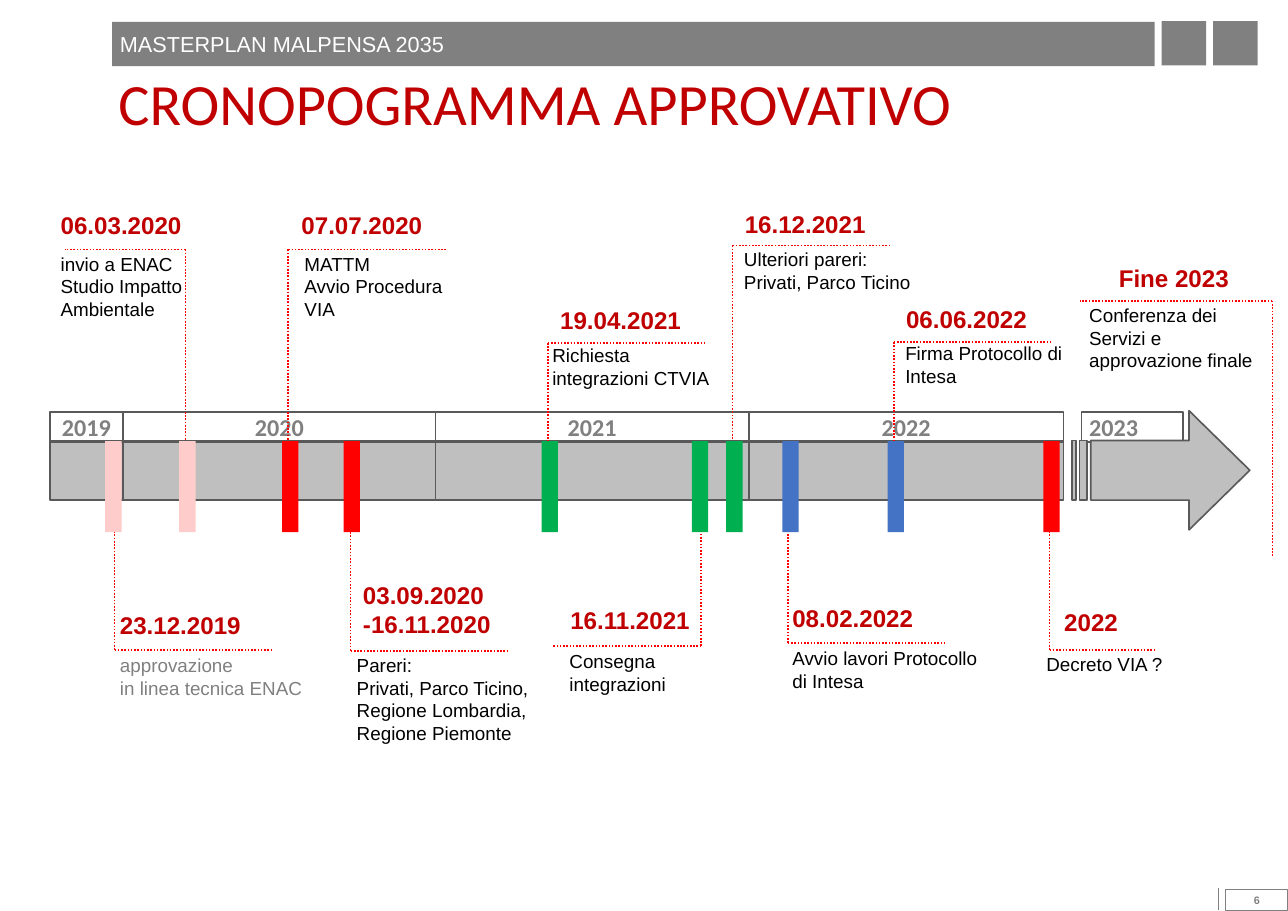
from lxml.etree import SubElement
from pptx import Presentation
from pptx.dml.color import RGBColor
from pptx.enum.dml import MSO_LINE
from pptx.enum.shapes import MSO_CONNECTOR, MSO_SHAPE
from pptx.enum.text import MSO_ANCHOR, MSO_AUTO_SIZE, PP_ALIGN
from pptx.oxml.ns import qn
from pptx.util import Inches, Pt

WHITE = RGBColor(0xFF, 0xFF, 0xFF)
BLACK = RGBColor(0, 0, 0)
GRAY = RGBColor(0x80, 0x80, 0x80)
SILVER = RGBColor(0xBF, 0xBF, 0xBF)
DARK = RGBColor(0x59, 0x59, 0x59)
CRIMSON = RGBColor(0xC0, 0, 0)
RED = RGBColor(0xFF, 0, 0)
PINK = RGBColor(0xFF, 0xCC, 0xCC)
GREEN = RGBColor(0, 0xB0, 0x50)
BLUE = RGBColor(0x44, 0x72, 0xC4)

TITLE = "CRONOPOGRAMMA APPROVATIVO"
HEADER = "MASTERPLAN MALPENSA 2035"
PAGE = "6"
YEARS = [("2019", 0.64, 1.58), ("2020", 1.58, 5.59),
         ("2021", 5.59, 9.61), ("2022", 9.61, 13.65)]
LAST_YEAR = "2023"

EVENTS = [
    ("23.12.2019", (1.44, 7.78), "approvazione\nin linea tecnica ENAC",
     (1.44, 8.34, 2.79), (1.47, 3.49, 8.34), (1.35, PINK)),
    ("06.03.2020", (0.68, 2.65), "invio a ENAC Studio Impatto Ambientale",
     (0.68, 3.19, 2.23), (2.38, 0.83, 3.2), (2.3, PINK)),
    ("07.07.2020", (3.77, 2.65), "MATTM\nAvvio Procedura VIA",
     (3.81, 3.19, 2.23), (3.7, 5.74, 3.2), (3.62, RED)),
    ("03.09.2020\v-16.11.2020", (4.56, 7.4),
     "Pareri:\nPrivati, Parco Ticino, Regione Lombardia, Regione Piemonte",
     (4.48, 8.34, 2.74), (4.5, 6.52, 8.35), (4.41, RED)),
    ("19.04.2021", (7.09, 3.87), "Richiesta integrazioni CTVIA",
     (6.99, 4.36, 2.36), (7.03, 9.05, 4.4), (6.95, GREEN)),
    ("16.11.2021", (7.22, 7.72), "Consegna integrazioni",
     (7.21, 8.29, 1.94), (9, 7.09, 8.29), (8.88, GREEN)),
    ("16.12.2021", (9.46, 2.64), "Ulteriori pareri:\nPrivati, Parco Ticino",
     (9.45, 3.13, 2.74), (9.4, 11.43, 3.15), (9.32, GREEN)),
    ("08.02.2022", (10.07, 7.69), "Avvio lavori Protocollo di Intesa",
     (10.07, 8.25, 2.79), (10.11, 12.12, 8.25), (10.04, BLUE)),
    ("06.06.2022", (11.53, 3.85), "Firma Protocollo di Intesa",
     (11.52, 4.34, 2.74), (11.47, 13.49, 4.39), (11.39, BLUE)),
    ("2022", (13.56, 7.74), "Decreto VIA ?",
     (13.33, 8.33, 1.8), (13.47, 14.84, 8.34), (13.39, RED)),
    ("Fine 2023", (14.26, 3.33), "Conferenza dei Servizi e approvazione finale",
     (13.88, 3.85, 2.45), (16.33, 13.86, 3.86), None),
]

HEAD_Y, HEAD_H = 5.29, 0.38
BAND_Y, BAND_H = 5.66, 0.76
BAR_W, BAR_H = 0.21, 1.17
FINAL_STEM_END = 7.15

YEAR_FONT = dict(name="Calibri", size=Pt(22.3), bold=True)
DATE_FONT = dict(name="Arial", size=Pt(22.3), bold=True)
NOTE_FONT = dict(name="Arial", size=Pt(17.4), bold=False)
HEADER_FONT = dict(name="Arial", size=Pt(20), bold=False)
PAGE_FONT = dict(name="Arial", size=Pt(10), bold=True)
TITLE_FONT = dict(name="Calibri", size=Pt(54), bold=False)


def write(tf, text, font, color, align=PP_ALIGN.LEFT, anchor=MSO_ANCHOR.TOP, wrap=True):
    tf.text = text
    tf.word_wrap = wrap
    tf.vertical_anchor = anchor
    for p in tf.paragraphs:
        p.alignment = align
        for r in p.runs:
            for key, value in font.items():
                setattr(r.font, key, value)
            r.font.color.rgb = color


def add_box(s, x, y, w, h, fill=None, line=None, weight=1.5, kind=MSO_SHAPE.RECTANGLE):
    sp = s.shapes.add_shape(kind, Inches(x), Inches(y), Inches(w), Inches(h))
    sp.shadow.inherit = False
    if fill is None:
        sp.fill.background()
    else:
        sp.fill.solid()
        sp.fill.fore_color.rgb = fill
    if line is None:
        sp.line.fill.background()
    else:
        sp.line.color.rgb = line
        sp.line.width = Pt(weight)
    return sp


def add_text(s, x, y, w, h, text, font, color, wrap=True):
    tf = s.shapes.add_textbox(Inches(x), Inches(y), Inches(w), Inches(h)).text_frame
    write(tf, text, font, color, wrap=wrap)


def add_line(s, x1, y1, x2, y2, color=RED, weight=1.5, dash=MSO_LINE.ROUND_DOT):
    c = s.shapes.add_connector(MSO_CONNECTOR.STRAIGHT, Inches(x1), Inches(y1),
                               Inches(x2), Inches(y2))
    c.line.color.rgb = color
    c.line.width = Pt(weight)
    if dash:
        c.line.dash_style = dash
    SubElement(c._element.spPr, qn("a:effectLst"))


def add_frame(s):
    title = s.shapes.title
    title.left, title.top = Inches(1.42), Inches(0.81)
    title.width, title.height = Inches(12.61), Inches(1.01)
    write(title.text_frame, TITLE, TITLE_FONT, CRIMSON)
    title.text_frame.auto_size = MSO_AUTO_SIZE.NONE
    header = add_box(s, 1.44, 0.28, 13.38, 0.57, GRAY)
    write(header.text_frame, HEADER, HEADER_FONT, WHITE, anchor=MSO_ANCHOR.MIDDLE)
    for x in (14.91, 15.57):
        add_box(s, x, 0.27, 0.57, 0.57, GRAY)
    page = add_box(s, 15.73, 11.41, 0.8, 0.28, line=GRAY, weight=1)
    write(page.text_frame, PAGE, PAGE_FONT, GRAY, PP_ALIGN.CENTER, MSO_ANCHOR.MIDDLE)
    add_line(s, 15.64, 11.4, 15.64, 11.68, GRAY, 1, None)


def add_axis(s):
    for year, x1, x2 in YEARS:
        add_box(s, x1, BAND_Y, x2 - x1, BAND_H, SILVER, DARK)
        head = add_box(s, x1, HEAD_Y, x2 - x1, HEAD_H, line=DARK)
        write(head.text_frame, year, YEAR_FONT, GRAY, PP_ALIGN.CENTER, MSO_ANCHOR.MIDDLE)
    last = add_box(s, 13.88, HEAD_Y, 1.3, HEAD_H, line=DARK)
    write(last.text_frame, LAST_YEAR, YEAR_FONT, GRAY, anchor=MSO_ANCHOR.MIDDLE)
    arrow = add_box(s, 13.76, 5.27, 2.28, 1.53, SILVER, DARK,
                    kind=MSO_SHAPE.STRIPED_RIGHT_ARROW)
    arrow.adjustments[0], arrow.adjustments[1] = 0.5, 0.51


def add_event(s, date, date_at, note, note_at, rule, bar):
    stem_x, rule_end, rule_y = rule
    if bar is None:
        stem_end = FINAL_STEM_END
    elif rule_y < BAND_Y:
        stem_end = BAND_Y
    else:
        stem_end = BAND_Y + BAND_H
    add_line(s, stem_x, rule_y, rule_end, rule_y)
    add_line(s, stem_x, rule_y, stem_x, stem_end)
    if bar:
        bar_x, color = bar
        add_box(s, bar_x, BAND_Y, BAR_W, BAR_H, color)
    date_lines = date.split("\v")
    date_w = 0.25 + 0.17 * max(len(line) for line in date_lines)
    date_h = 0.11 + 0.37 * len(date_lines)
    add_text(s, *date_at, date_w, date_h, date, DATE_FONT, CRIMSON, wrap=False)
    x, y, w = note_at
    note_color = GRAY if note.startswith("approvazione") else BLACK
    add_text(s, x, y, w, 0.69, note, NOTE_FONT, note_color)


def main():
    prs = Presentation()
    prs.slide_width, prs.slide_height = Inches(16.53), Inches(11.69)
    s = prs.slides.add_slide(prs.slide_layouts[5])
    add_frame(s)
    add_axis(s)
    for event in EVENTS:
        add_event(s, *event)
    prs.save("out.pptx")


if __name__ == "__main__":
    main()
